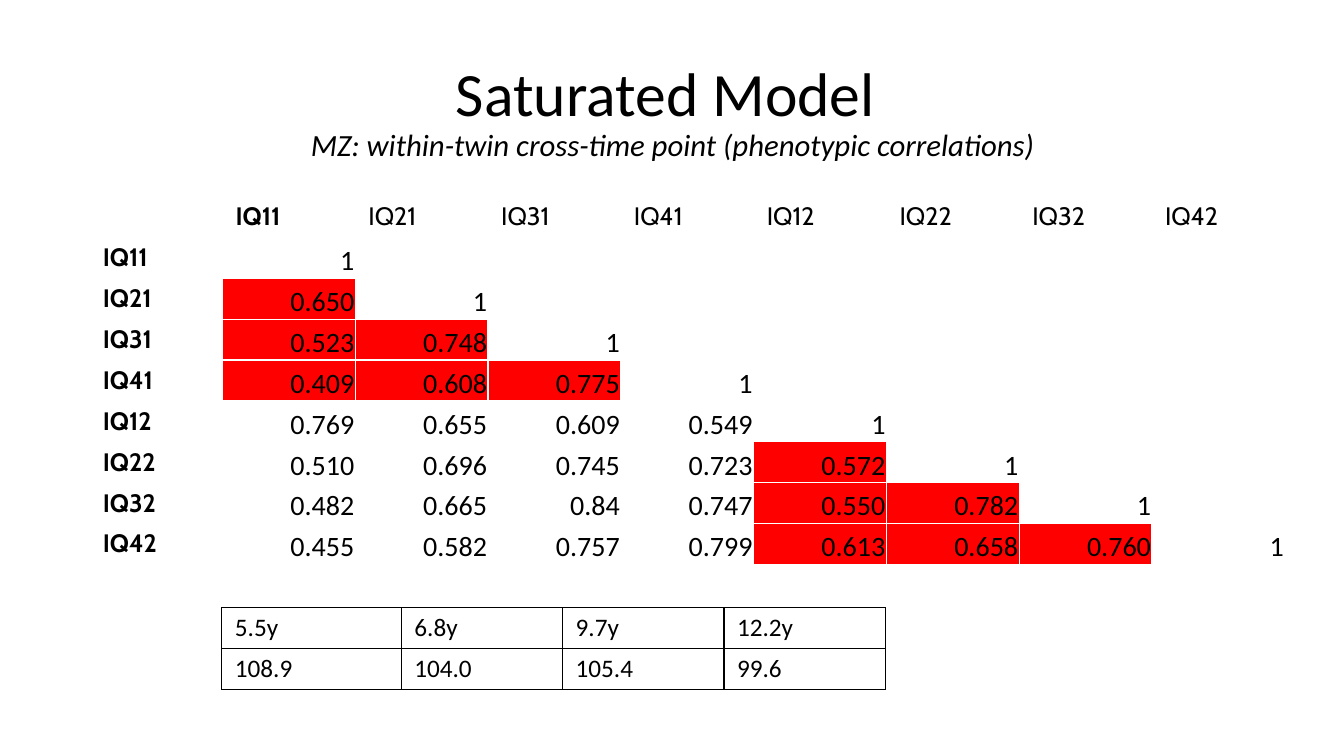
from lxml import etree
from pptx import Presentation
from pptx.dml.color import RGBColor
from pptx.enum.text import MSO_ANCHOR, PP_ALIGN
from pptx.oxml.ns import qn
from pptx.util import Inches, Pt

TOP, MIDDLE, BOTTOM = MSO_ANCHOR.TOP, MSO_ANCHOR.MIDDLE, MSO_ANCHOR.BOTTOM
LEFT, CENTER, RIGHT = PP_ALIGN.LEFT, PP_ALIGN.CENTER, PP_ALIGN.RIGHT

# Content
TITLE = "Saturated Model "
SUBTITLE = "MZ: within-twin cross-time point (phenotypic correlations)"
VARIABLES = ["IQ11", "IQ21", "IQ31", "IQ41", "IQ12", "IQ22", "IQ32", "IQ42"]
CORRELATIONS = [
    ["1"],
    ["0.650", "1"],
    ["0.523", "0.748", "1"],
    ["0.409", "0.608", "0.775", "1"],
    ["0.769", "0.655", "0.609", "0.549", "1"],
    ["0.510", "0.696", "0.745", "0.723", "0.572", "1"],
    ["0.482", "0.665", "0.84", "0.747", "0.550", "0.782", "1"],
    ["0.455", "0.582", "0.757", "0.799", "0.613", "0.658", "0.760", "1"],
]
MEANS = [
    ["5.5y", "6.8y", "9.7y", "12.2y"],
    ["108.9", "104.0", "105.4", "99.6"],
]
TIME_POINTS = 4
BLACK, WHITE, RED = "000000", "FFFFFF", "FF0000"
ROW_H = 0.405
LABEL_INSETS = (0.13, 0.05, 0.13, 0.05)
VALUE_INSETS = (0.01, 0.01, 0.01, 0)


def rgb(color):
    return RGBColor.from_string(color)


def set_font(font, name, size, bold=False, italic=False):
    font.name, font.size = name, Pt(size)
    font.bold, font.italic = bold, italic
    font.color.rgb = rgb(BLACK)


def set_borders(cell, color, bottom=1):
    tcPr = cell._tc.get_or_add_tcPr()
    for side, width in (("L", 1), ("R", 1), ("T", 1), ("B", bottom)):
        ln = etree.SubElement(tcPr, qn(f"a:ln{side}"), w=str(Pt(width)))
        fill = etree.SubElement(ln, qn("a:solidFill"))
        etree.SubElement(fill, qn("a:srgbClr"), val=color)


def set_cell(cell, text, font="Calibri", size=18, bold=False, align=LEFT,
             anchor=TOP, insets=LABEL_INSETS, fill=None):
    cell.text = text
    p = cell.text_frame.paragraphs[0]
    p.alignment = align
    set_font(p.font, font, size, bold)
    cell.vertical_anchor = anchor
    (cell.margin_left, cell.margin_top,
     cell.margin_right, cell.margin_bottom) = map(Inches, insets)
    if fill:
        cell.fill.solid()
        cell.fill.fore_color.rgb = rgb(fill)
    else:
        cell.fill.background()


def add_table(s, left, top, widths, rows):
    shape = s.shapes.add_table(rows, len(widths), Inches(left), Inches(top),
                               Inches(sum(widths)), Inches(rows * ROW_H))
    table = shape.table
    for column, width in zip(table.columns, widths):
        column.width = Inches(width)
    for row in table.rows:
        row.height = Inches(ROW_H)
    table.first_row = table.horz_banding = False
    return table


prs = Presentation()
prs.slide_width, prs.slide_height = Inches(13.33), Inches(7.5)
s = prs.slides.add_slide(prs.slide_layouts[5])

# Title with subtitle line
title = s.shapes.title
title.left, title.top = Inches(0.92), Inches(0.4)
title.width, title.height = Inches(11.5), Inches(1.45)
tf = title.text_frame
tf.vertical_anchor = MIDDLE
p = tf.paragraphs[0]
p.alignment, p.line_spacing = CENTER, 0.9
r = p.add_run()
r.text = TITLE
set_font(r.font, "Calibri", 44)
p.add_line_break()
r = p.add_run()
r.text = SUBTITLE
set_font(r.font, "Calibri", 22, italic=True)

# Correlation matrix: within-twin pairs below the diagonal are red
n = len(VARIABLES)
matrix = add_table(s, 0.89, 1.95, [1.317] * (n + 1), n + 1)
for i in range(n + 1):
    for j in range(n + 1):
        cell = matrix.cell(i, j)
        set_borders(cell, WHITE, bottom=3 if i == 0 else 1)
        if i == 0 or j == 0:
            label = VARIABLES[max(i, j) - 1] if i or j else ""
            set_cell(cell, label, "Cabin", bold=j < 2)
        else:
            text = CORRELATIONS[i - 1][j - 1] if j <= i else ""
            same_twin = (i - 1) // TIME_POINTS == (j - 1) // TIME_POINTS
            set_cell(cell, text, size=20, align=RIGHT, anchor=BOTTOM,
                     insets=VALUE_INSETS,
                     fill=RED if j < i and same_twin else None)

# Mean IQ by age
means = add_table(s, 2.2, 6.03, [1.78, 1.6, 1.6, 1.6], len(MEANS))
for i, row in enumerate(MEANS):
    for j, text in enumerate(row):
        set_borders(means.cell(i, j), BLACK)
        set_cell(means.cell(i, j), text)

prs.save("out.pptx")
